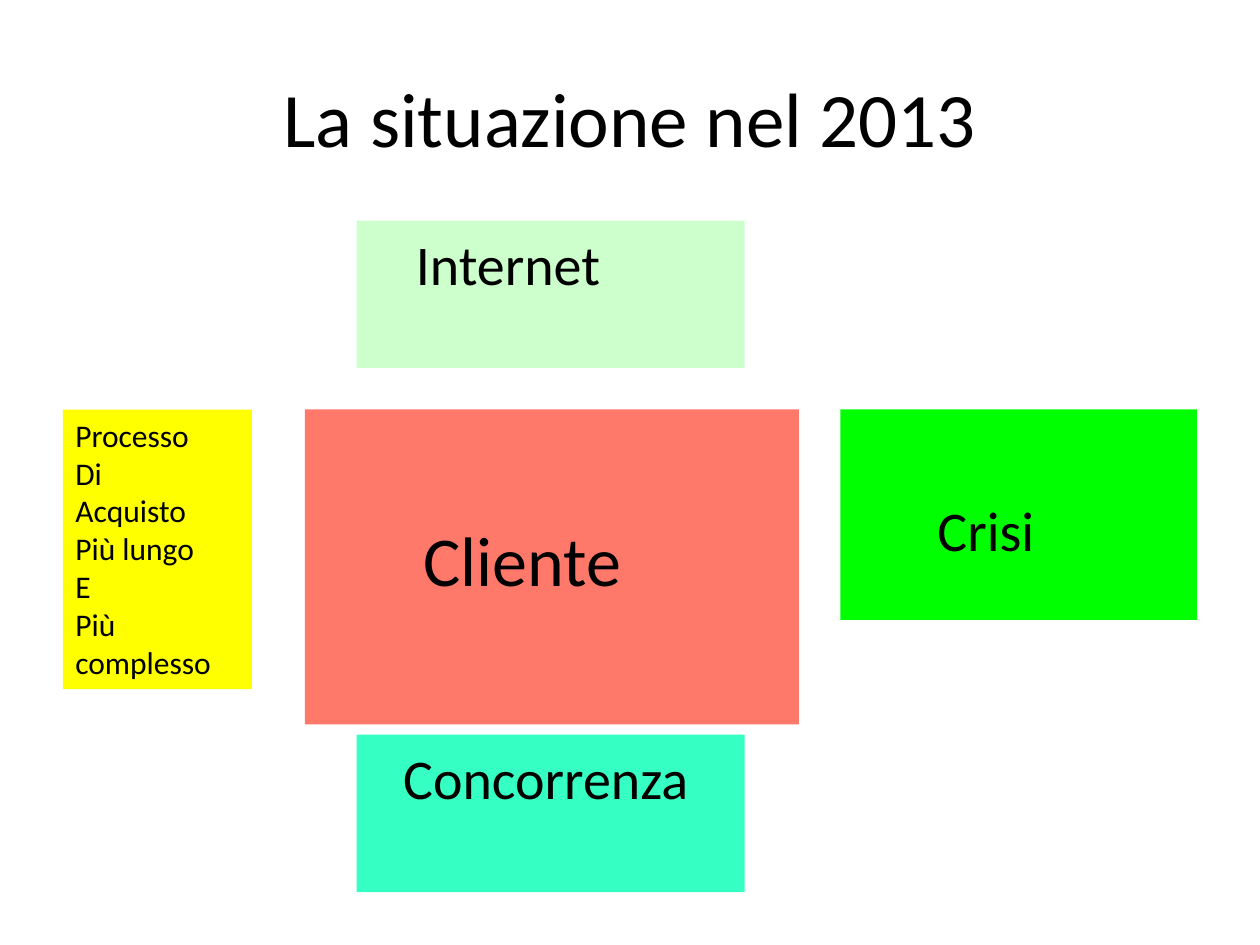
from lxml.etree import SubElement
from pptx import Presentation
from pptx.dml.color import RGBColor
from pptx.enum.shapes import MSO_SHAPE as Preset
from pptx.enum.text import MSO_ANCHOR as Anchor, MSO_AUTO_SIZE as AutoSize, PP_ALIGN as Align
from pptx.oxml.ns import qn
from pptx.util import Inches, Pt

BLACK = RGBColor(0x00, 0x00, 0x00)
PALE_GREEN = RGBColor(0xCC, 0xFF, 0xCC)
CORAL = RGBColor(0xFF, 0x79, 0x6A)
GREEN = RGBColor(0x00, 0xFF, 0x00)
TURQUOISE = RGBColor(0x35, 0xFF, 0xC2)
YELLOW = RGBColor(0xFF, 0xFF, 0x00)


def place(box, left, top, width, height):
    box.left, box.top = Inches(left), Inches(top)
    box.width, box.height = Inches(width), Inches(height)


def write(box, wording, size, align, anchor):
    frame = box.text_frame
    frame.text = wording
    frame.word_wrap = True
    frame.auto_size = AutoSize.NONE
    frame.vertical_anchor = anchor
    for paragraph in frame.paragraphs:
        paragraph.alignment = align
        paragraph.space_before = Pt(0)
        for run in paragraph.runs:
            run.font.name = "Calibri"
            run.font.size = Pt(size)
            run.font.color.rgb = BLACK


deck = Presentation()
deck.slide_width, deck.slide_height = Inches(10), Inches(7.5)
slide = deck.slides.add_slide(deck.slide_layouts[1])
title, internet = slide.placeholders

place(title, 0.5, 0.3, 9, 1.25)
write(title, "La situazione nel 2013", 44, Align.CENTER, Anchor.MIDDLE)

# The four forces surround the customer: one column in the middle, one row across.
side_left, force_left, force_width = 0.5, 2.83, 3.08
row_top = 3.25
process = "Processo\nDi\nAcquisto\nPiù lungo\nE\nPiù\ncomplesso"

# wording, position and size, fill, text size, left and top inset
factors = [
    ("Internet", (force_left, 1.75, force_width, 1.17), PALE_GREEN, 32, 0.47, 0.07),
    ("Cliente", (2.42, row_top, 3.92, 2.5), CORAL, 40, 0.94, 0.85),
    ("Crisi", (6.67, row_top, 2.83, 1.67), GREEN, 32, 0.77, 0.68),
    ("Concorrenza", (force_left, 5.83, force_width, 1.25), TURQUOISE, 32, 0.37, 0.07),
    (process, (side_left, row_top, 1.5, 2.22), YELLOW, 18, 0.1, 0.05),
]
for wording, area, fill, size, inset_left, inset_top in factors:
    if wording == "Internet":
        factor = internet
    else:
        factor = slide.shapes.add_shape(Preset.RECTANGLE, 0, 0, 0, 0)
        factor.shadow.inherit = False
        factor.line.fill.background()
    place(factor, *area)
    factor.fill.solid()
    factor.fill.fore_color.rgb = fill
    write(factor, wording, size, Align.LEFT, Anchor.TOP)
    factor.text_frame.margin_left = Inches(inset_left)
    factor.text_frame.margin_top = Inches(inset_top)

# The body placeholder is a plain label without bullet or hanging indent.
label = internet.text_frame.paragraphs[0]._p.get_or_add_pPr()
label.set("marL", "0")
label.set("indent", "0")
SubElement(label, qn("a:buNone"))

deck.save("out.pptx")
